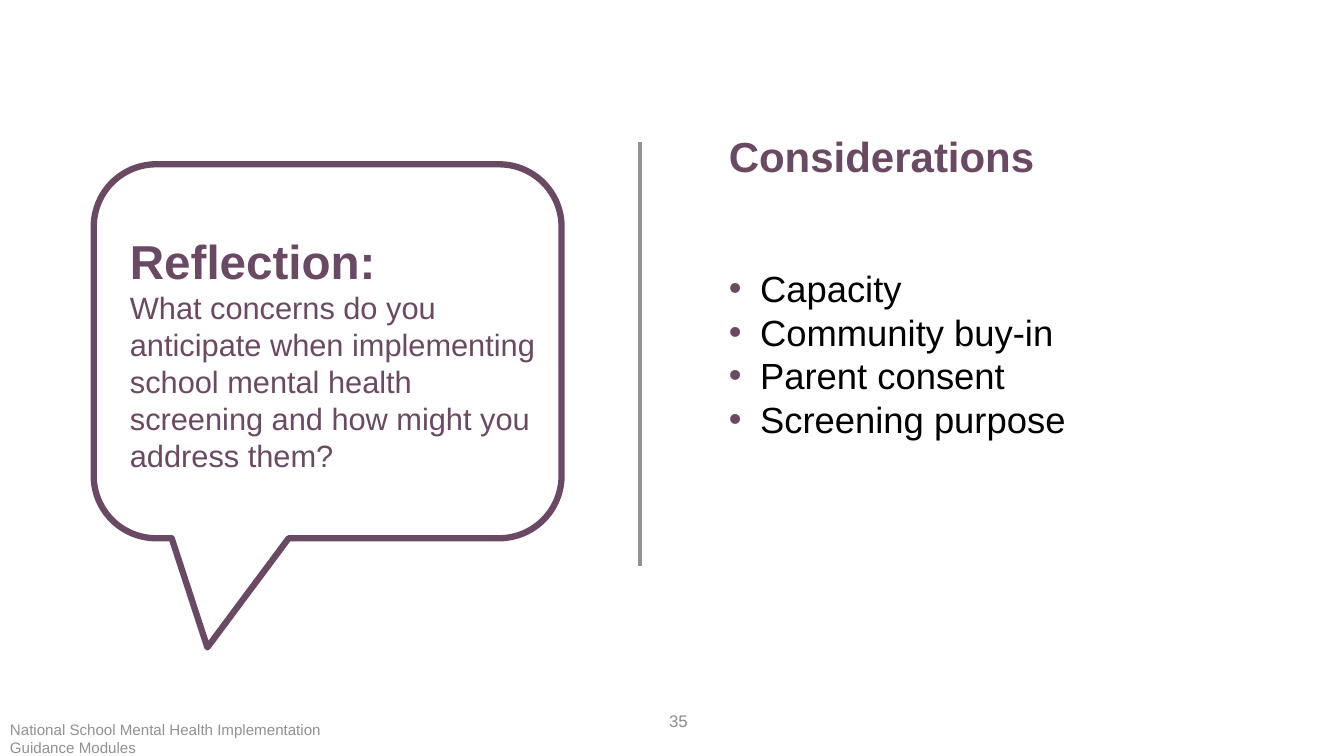
from dataclasses import dataclass

from lxml import etree
from pptx import Presentation
from pptx.dml.color import RGBColor
from pptx.enum import shapes, text
from pptx.oxml import ns
from pptx.util import Inches, Pt

COLORS = {"plum": "6A4A62", "gray": "919195", "page": "8C8C8C", "black": "000000"}
INDENT = Inches(0.31)


@dataclass(frozen=True)
class Line:
    wording: str
    size: float
    color: str
    bold: bool = False
    bullet: bool = False
    align: text.PP_ALIGN = text.PP_ALIGN.LEFT


@dataclass(frozen=True)
class Block:
    left: float
    top: float
    width: float
    height: float
    lines: tuple[Line, ...]
    anchor: text.MSO_ANCHOR = text.MSO_ANCHOR.TOP


def rgb(name: str) -> RGBColor:
    return RGBColor.from_string(COLORS[name])


def add_bullet(paragraph) -> None:
    properties = paragraph._p.get_or_add_pPr()
    properties.set("marL", str(INDENT))
    properties.set("indent", str(-INDENT))
    bullet_color = etree.SubElement(properties, ns.qn("a:buClr"))
    etree.SubElement(bullet_color, ns.qn("a:srgbClr"), val=COLORS["plum"])
    etree.SubElement(properties, ns.qn("a:buFont"), typeface="Arial")
    etree.SubElement(properties, ns.qn("a:buChar"), char="•")


def add_block(slide, block: Block) -> None:
    box = slide.shapes.add_textbox(
        Inches(block.left), Inches(block.top), Inches(block.width), Inches(block.height)
    )
    frame = box.text_frame
    frame.word_wrap = True
    frame.vertical_anchor = block.anchor
    frame.text = "\n".join(line.wording for line in block.lines)
    for paragraph, line in zip(frame.paragraphs, block.lines):
        paragraph.alignment = line.align
        if line.bullet:
            add_bullet(paragraph)
        for run in paragraph.runs:
            run.font.name = "Arial"
            run.font.size = Pt(line.size)
            run.font.bold = line.bold
            run.font.color.rgb = rgb(line.color)


def add_speech_bubble(slide) -> None:
    bubble = slide.shapes.add_shape(
        shapes.MSO_SHAPE.ROUNDED_RECTANGULAR_CALLOUT,
        Inches(0.93), Inches(1.63), Inches(4.64), Inches(3.71),
    )
    for index, value in enumerate((-0.257, 0.792, 0.167)):
        bubble.adjustments[index] = value
    bubble.shadow.inherit = False
    bubble.fill.background()
    bubble.line.color.rgb = rgb("plum")
    bubble.line.width = Pt(4.5)


def add_divider(slide) -> None:
    divider = slide.shapes.add_connector(
        shapes.MSO_CONNECTOR.STRAIGHT,
        Inches(6.35), Inches(1.41), Inches(6.35), Inches(5.62),
    )
    divider.line.color.rgb = rgb("gray")
    divider.line.width = Pt(3)
    etree.SubElement(divider._element.spPr, ns.qn("a:effectLst"))


CONSIDERATIONS = ("Capacity", "Community buy-in", "Parent consent", "Screening purpose")
QUESTION = (
    "What concerns do you anticipate when implementing school mental health "
    "screening and how might you address them?"
)
BLOCKS = (
    Block(3.92, 6.95, 3, 0.4,
          (Line("35", 12, "page", align=text.PP_ALIGN.RIGHT),), text.MSO_ANCHOR.MIDDLE),
    Block(1.19, 2.25, 4.38, 2.52,
          (Line("Reflection:", 34, "plum", bold=True), Line(QUESTION, 22, "plum"))),
    Block(7.13, 1.25, 6.05, 0.6,
          (Line("Considerations", 30, "plum", bold=True),), text.MSO_ANCHOR.MIDDLE),
    Block(7.13, 2.59, 3.72, 1.85,
          tuple(Line(item, 26, "black", bullet=True) for item in CONSIDERATIONS)),
    Block(0, 7.1, 3.81, 0.4,
          (Line("National School Mental Health Implementation Guidance Modules", 10.8, "gray"),)),
)


def main() -> None:
    """Build the reflection slide on school mental health screening."""
    deck = Presentation()
    deck.slide_width, deck.slide_height = Inches(13.33), Inches(7.5)
    slide = deck.slides.add_slide(deck.slide_layouts[6])
    add_speech_bubble(slide)
    add_divider(slide)
    for block in BLOCKS:
        add_block(slide, block)
    deck.save("out.pptx")


if __name__ == "__main__":
    main()
